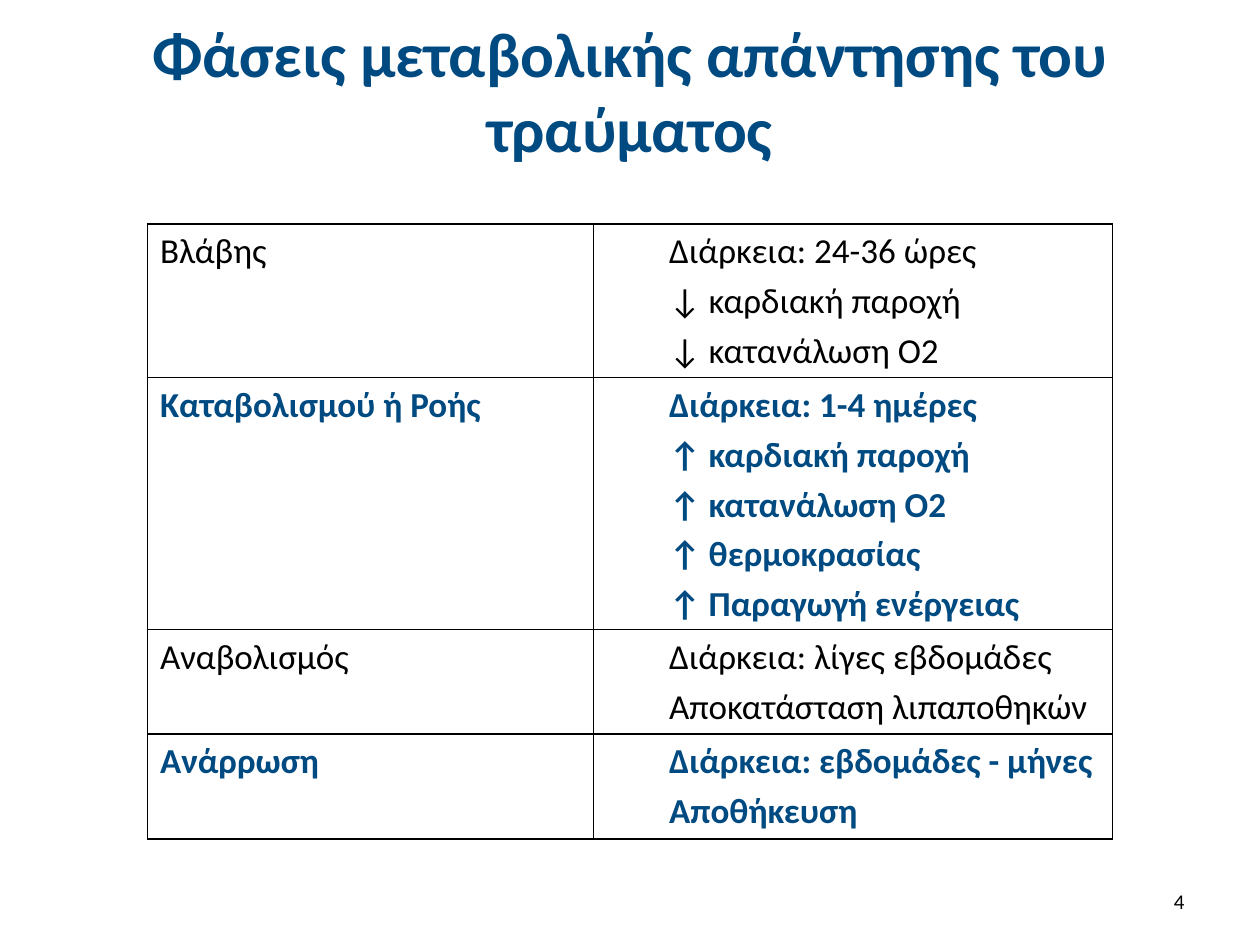
from lxml.etree import SubElement
from pptx import Presentation
from pptx.dml.color import RGBColor
from pptx.enum.text import MSO_ANCHOR, PP_ALIGN
from pptx.oxml.ns import qn
from pptx.util import Inches, Pt

WIDE, HIGH = 10, 7.5
COLORS = {"blue": "004A82", "black": "000000"}
COLS = (3.54 / WIDE, 4.12 / WIDE)
PHASES = [
    ("Βλάβης", ["Διάρκεια: 24-36 ώρες", "↓ καρδιακή παροχή", "↓ κατανάλωση Ο2"]),
    ("Καταβολισμού ή Ροής",
     ["Διάρκεια: 1-4 ημέρες", "↑ καρδιακή παροχή", "↑ κατανάλωση Ο2",
      "↑ θερμοκρασίας", "↑ Παραγωγή ενέργειας"]),
    ("Αναβολισμός", ["Διάρκεια: λίγες εβδομάδες", "Αποκατάσταση λιπαποθηκών"]),
    ("Ανάρρωση", ["Διάρκεια: εβδομάδες - μήνες", "Αποθήκευση"]),
]


def across(share):
    return Inches(share * WIDE)


def down(share):
    return Inches(share * HIGH)


def write(frame, lines, size=20, color="black", bold=False,
          align=PP_ALIGN.LEFT, indent=0):
    """Fill a text frame, one paragraph per line, spaced by 20% of the size."""
    frame.word_wrap = True
    for i, line in enumerate(lines):
        para = frame.add_paragraph() if i else frame.paragraphs[0]
        para.alignment = align
        para.space_before = Pt(size * 0.2 if i else 0)
        if indent:
            props = para._p.get_or_add_pPr()
            props.set("marL", str(Inches(indent)))
            props.set("indent", "0")
        run = para.add_run()
        run.text = line
        font = run.font
        font.name, font.size, font.bold = "Calibri", Pt(size), bold
        font.color.rgb = RGBColor.from_string(COLORS[color])


def add_text(slide, text, left, top, width, height, **style):
    box = slide.shapes.add_textbox(
        across(left), down(top), across(width), down(height))
    box.text_frame.vertical_anchor = MSO_ANCHOR.MIDDLE
    write(box.text_frame, [text], **style)


def frame_cell(cell):
    """Clear the fill and draw a thin black line on all four sides."""
    props = cell._tc.get_or_add_tcPr()
    for side in ("lnL", "lnR", "lnT", "lnB"):
        line = SubElement(props, qn(f"a:{side}"), w=str(Pt(1)))
        fill = SubElement(line, qn("a:solidFill"))
        SubElement(fill, qn("a:srgbClr"), val=COLORS["black"])
    cell.fill.background()


def add_phases(slide, left, top):
    heights = [Inches(0.05 + 0.39 * len(facts)) for _, facts in PHASES]
    table = slide.shapes.add_table(
        len(PHASES), len(COLS), across(left), down(top),
        across(sum(COLS)), sum(heights)).table
    table.first_row = table.horz_banding = False
    for col, share in zip(table.columns, COLS):
        col.width = across(share)
    for i, (name, facts) in enumerate(PHASES):
        table.rows[i].height = heights[i]
        style = {"color": "blue", "bold": True} if i % 2 else {}
        for j, (lines, indent) in enumerate((([name], 0), (facts, 0.5))):
            cell = table.cell(i, j)
            frame_cell(cell)
            write(cell.text_frame, lines, indent=indent, **style)


def main():
    deck = Presentation()
    deck.slide_width, deck.slide_height = Inches(WIDE), Inches(HIGH)
    slide = deck.slides.add_slide(deck.slide_layouts[6])
    add_text(slide, "Φάσεις μεταβολικής απάντησης του τραύματος",
             0.05, 0.02, 0.9, 0.15, size=36, color="blue", bold=True,
             align=PP_ALIGN.CENTER)
    add_phases(slide, 0.117, 0.237)
    add_text(slide, "4", 0.717, 0.927, 0.233, 0.053, size=12,
             align=PP_ALIGN.RIGHT)
    deck.save("out.pptx")


if __name__ == "__main__":
    main()
